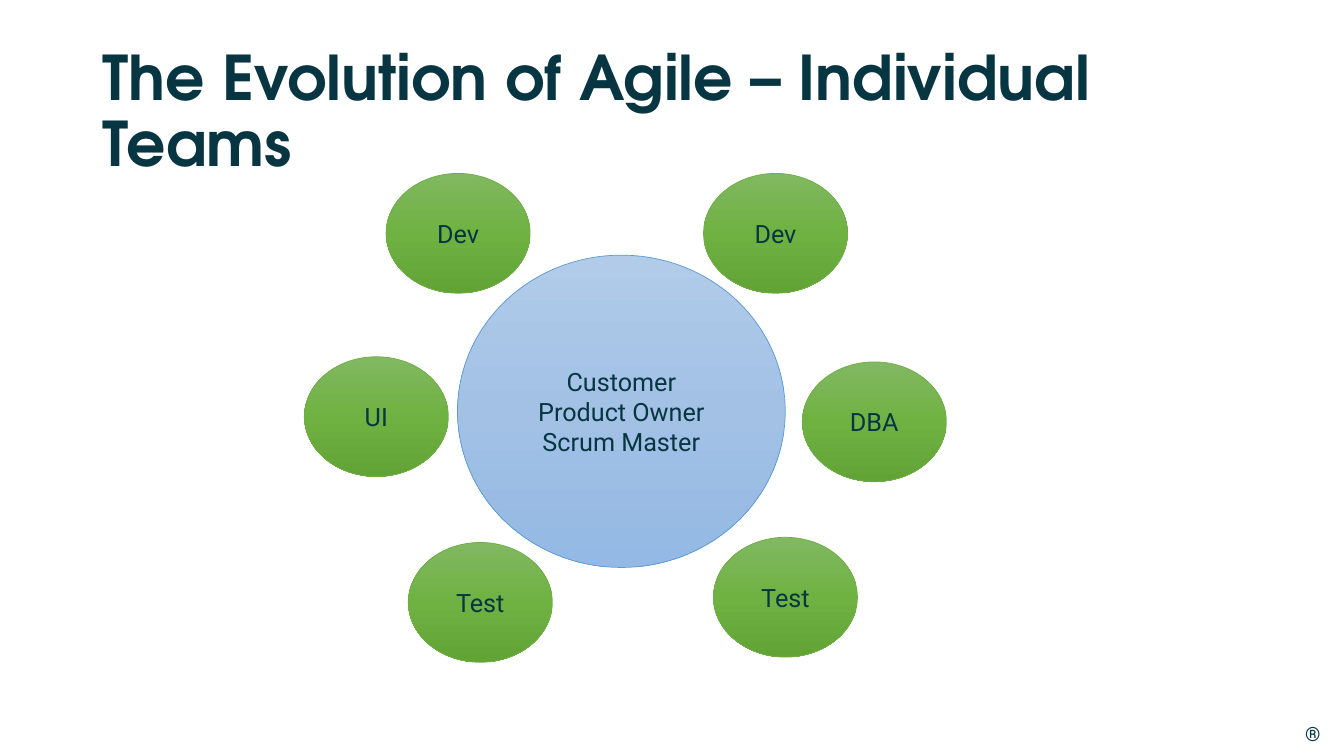
from copy import deepcopy
from dataclasses import dataclass

from pptx import Presentation
from pptx.dml.color import RGBColor
from pptx.enum.shapes import MSO_SHAPE
from pptx.enum.text import MSO_ANCHOR, MSO_AUTO_SIZE, PP_ALIGN
from pptx.oxml.ns import qn
from pptx.util import Cm, Pt


@dataclass(frozen=True)
class Theme:
    ink: str = "073642"
    paper: str = "FFFFFF"
    blue: tuple = ("B1CBE9", "A3C1E5", "93B9E4")
    green: tuple = ("81B861", "6FB242", "62A336")
    blue_edge: str = "5B9BD5"
    green_edge: str = "70AD47"
    head_font: str = "TeX Gyre Adventor"
    body_font: str = "Roboto"
    head_size: int = 44
    body_size: int = 18
    mark_size: int = 14
    edge: float = 0.5


class Deck:
    def __init__(self, theme):
        self.theme = theme
        self.prs = Presentation()
        self.prs.slide_width, self.prs.slide_height = Cm(33.87), Cm(19.05)
        self.slide = self.prs.slides.add_slide(self.prs.slide_layouts[5])
        paper = self.slide.background.fill
        paper.solid()
        paper.fore_color.rgb = RGBColor.from_string(theme.paper)

    def add_text(self, frame, lines, font, size, align, bold=False):
        for i, line in enumerate(lines):
            para = frame.add_paragraph() if i else frame.paragraphs[0]
            para.alignment = align
            run = para.add_run()
            run.text = line
            run.font.name, run.font.size, run.font.bold = font, Pt(size), bold
            run.font.color.rgb = RGBColor.from_string(self.theme.ink)

    def title(self, text, left, top, width, height):
        box = self.slide.shapes.title
        box.left, box.top = Cm(left), Cm(top)
        box.width, box.height = Cm(width), Cm(height)
        frame = box.text_frame
        frame.word_wrap = True
        frame.auto_size = MSO_AUTO_SIZE.NONE
        frame.vertical_anchor = MSO_ANCHOR.MIDDLE
        self.add_text(frame, [text], self.theme.head_font,
                      self.theme.head_size, PP_ALIGN.LEFT, True)
        frame.paragraphs[0].line_spacing = 0.9

    def shade(self, shape, colors):
        fill = shape.fill
        fill.gradient()
        fill.gradient_angle = 270
        # A third stop halfway between the two default ones
        stops = shape._element.spPr.find(qn("a:gradFill")).find(qn("a:gsLst"))
        mid = deepcopy(stops[0])
        mid.set("pos", "50000")
        stops.insert(1, mid)
        for stop, color in zip(fill.gradient_stops, colors):
            stop.color.rgb = RGBColor.from_string(color)

    def oval(self, lines, left, top, width, height, colors, edge):
        shape = self.slide.shapes.add_shape(
            MSO_SHAPE.OVAL, Cm(left), Cm(top), Cm(width), Cm(height))
        shape.shadow.inherit = False
        self.shade(shape, colors)
        shape.line.color.rgb = RGBColor.from_string(edge)
        shape.line.width = Pt(self.theme.edge)
        shape.text_frame.vertical_anchor = MSO_ANCHOR.MIDDLE
        self.add_text(shape.text_frame, lines, self.theme.body_font,
                      self.theme.body_size, PP_ALIGN.CENTER)

    def mark(self, text, left, top, width, height):
        box = self.slide.shapes.add_textbox(
            Cm(left), Cm(top), Cm(width), Cm(height))
        frame = box.text_frame
        frame.margin_left = frame.margin_right = 0
        frame.margin_top = frame.margin_bottom = 0
        self.add_text(frame, [text], self.theme.body_font,
                      self.theme.mark_size, PP_ALIGN.LEFT)


def main():
    theme = Theme()
    deck = Deck(theme)

    # Title and corner mark
    deck.title("The Evolution of Agile – Individual Teams",
               2.34, 1.02, 29.21, 3.68)
    deck.mark("®", 32.89, 18.19, 0.46, 0.61)

    # Core of the team
    deck.oval(["Customer", "Product Owner", "Scrum Master"],
              11.53, 6.43, 8.26, 7.87, theme.blue, theme.blue_edge)

    # Roles around the core
    roles = [("Dev", 17.73, 4.37), ("Test", 17.98, 13.54),
             ("Test", 10.29, 13.67), ("Dev", 9.73, 4.37),
             ("DBA", 20.22, 9.12), ("UI", 7.67, 8.99)]
    for role, left, top in roles:
        deck.oval([role], left, top, 3.63, 3.02,
                  theme.green, theme.green_edge)

    deck.prs.save("out.pptx")


if __name__ == "__main__":
    main()
